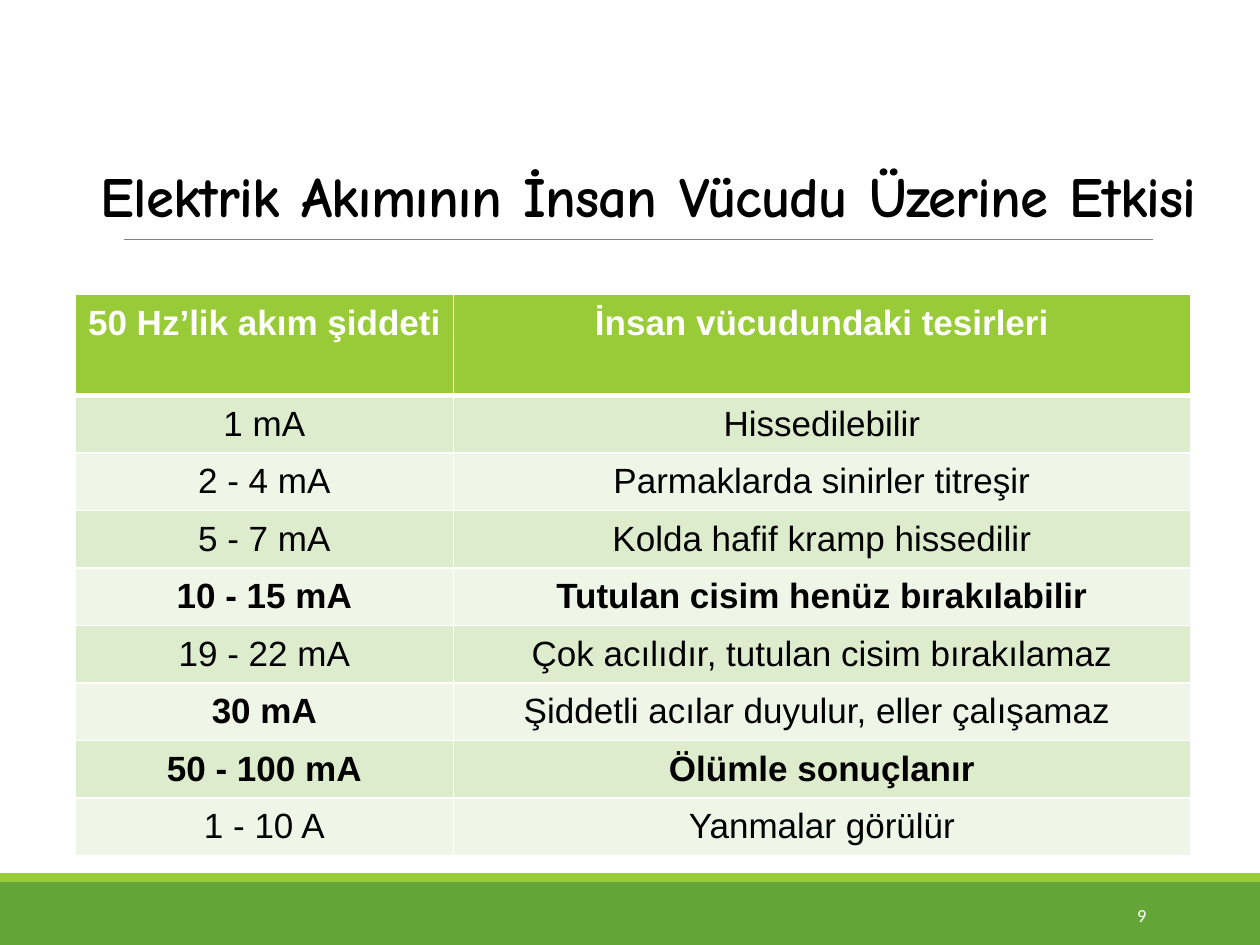
from dataclasses import dataclass

from lxml.etree import SubElement
from pptx import Presentation
from pptx.dml.color import RGBColor
from pptx.enum.shapes import MSO_CONNECTOR as Connector, MSO_SHAPE as Shape
from pptx.enum.text import MSO_ANCHOR as Anchor, MSO_AUTO_SIZE as AutoSize, PP_ALIGN as Align
from pptx.oxml.ns import qn
from pptx.util import Cm, Pt

COLORS = {
    "white": "FFFFFF",
    "black": "000000",
    "rule": "808080",
    "green": "63A537",
    "lime": "99CB38",
    "odd_row": "DEECCE",
    "even_row": "EFF6E8",
}


@dataclass
class Bar:
    top: float
    height: float
    color: str


@dataclass
class Effect:
    current: str
    result: str
    bold_current: bool = False
    bold_result: bool = False


BARS = [Bar(17.78, 1.27, "green"), Bar(17.6, 0.18, "lime")]
HEADER = Effect("50 Hz’lik akım şiddeti ", "İnsan vücudundaki tesirleri", True, True)
EFFECTS = [
    Effect("1 mA", "Hissedilebilir"),
    Effect("2 - 4 mA", "Parmaklarda sinirler titreşir"),
    Effect("5 - 7 mA", "Kolda hafif kramp hissedilir"),
    Effect("10 - 15 mA", "Tutulan cisim henüz bırakılabilir", True, True),
    Effect("19 - 22 mA", "Çok acılıdır, tutulan cisim bırakılamaz"),
    Effect("30 mA", "Şiddetli acılar duyulur, eller çalışamaz ", True),
    Effect("50 - 100 mA", "Ölümle sonuçlanır", True, True),
    Effect("1 - 10 A", "Yanmalar görülür"),
]
COLUMN_WIDTHS = (7.62, 14.86)
HEADER_HEIGHT, ROW_HEIGHT = 2.03, 1.16


def rgb(name: str) -> RGBColor:
    return RGBColor.from_string(COLORS[name])


def set_all(target, values: dict) -> None:
    for name, value in values.items():
        setattr(target, name, value)


def write(frame, text: str, color: str, font: dict, paragraph: dict):
    para = frame.paragraphs[0]
    set_all(para, paragraph)
    span = para.add_run()
    span.text = text
    set_all(span.font, font)
    span.font.color.rgb = rgb(color)
    return span


def draw_bar(page, bar: Bar, width: int) -> None:
    box = page.shapes.add_shape(Shape.RECTANGLE, 0, Cm(bar.top), width, Cm(bar.height))
    box.shadow.inherit = False
    box.fill.solid()
    box.fill.fore_color.rgb = rgb(bar.color)
    box.line.fill.background()


def draw_rule(page) -> None:
    rule = page.shapes.add_connector(Connector.STRAIGHT, Cm(2.49), Cm(4.83), Cm(23.24), Cm(4.83))
    rule.line.color.rgb = rgb("rule")
    rule.line.width = Pt(0.5)
    SubElement(rule._element.spPr, qn("a:effectLst"))


def draw_title(page) -> None:
    title = page.shapes.title
    set_all(title, {"left": Cm(1.78), "top": Cm(1.88), "width": Cm(22.33), "height": Cm(2.87)})
    set_all(title.text_frame, {
        "word_wrap": True, "auto_size": AutoSize.NONE,
        "vertical_anchor": Anchor.BOTTOM, "margin_right": 0,
    })
    span = write(
        title.text_frame, "Elektrik Akımının İnsan Vücudu Üzerine Etkisi ", "black",
        {"name": "Comic Neue", "size": Pt(32.4), "bold": True},
        {"alignment": Align.JUSTIFY, "line_spacing": 1.5},
    )
    span.font._element.set("spc", "-50")


def add_border(cell, side: str, points: float) -> None:
    properties = cell._tc.get_or_add_tcPr()
    line = SubElement(properties, qn(f"a:ln{side}"), w=str(Pt(points)))
    fill = SubElement(line, qn("a:solidFill"))
    SubElement(fill, qn("a:srgbClr"), val=COLORS["white"])


def fill_cell(cell, text: str, bold: bool, row: int) -> None:
    thick_side = {0: "B", 1: "T"}.get(row)
    for side in "LRTB":
        add_border(cell, side, 3 if side == thick_side else 1)
    cell.fill.solid()
    cell.fill.fore_color.rgb = rgb("lime" if row == 0 else "odd_row" if row % 2 else "even_row")
    write(
        cell.text_frame, text, "black" if row else "white",
        {"name": "Arial", "size": Pt(20), "bold": bold},
        {"alignment": Align.CENTER, "line_spacing": 1.07},
    )


def draw_table(page) -> None:
    rows = [HEADER, *EFFECTS]
    height = HEADER_HEIGHT + ROW_HEIGHT * len(EFFECTS)
    table = page.shapes.add_table(
        len(rows), len(COLUMN_WIDTHS), Cm(1.52), Cm(5.94), Cm(sum(COLUMN_WIDTHS)), Cm(height)
    ).table
    for column, width in zip(table.columns, COLUMN_WIDTHS):
        column.width = Cm(width)
    for index, effect in enumerate(rows):
        table.rows[index].height = Cm(ROW_HEIGHT if index else HEADER_HEIGHT)
        fill_cell(table.cell(index, 0), effect.current, effect.bold_current, index)
        fill_cell(table.cell(index, 1), effect.result, effect.bold_result, index)


def draw_page_number(page) -> None:
    box = page.shapes.add_textbox(Cm(20.62), Cm(17.93), Cm(2.74), Cm(1.02))
    set_all(box.text_frame, {"word_wrap": True, "vertical_anchor": Anchor.MIDDLE})
    write(
        box.text_frame, "9", "white",
        {"name": "Calibri", "size": Pt(10.5)}, {"alignment": Align.RIGHT},
    )


def main() -> None:
    deck = Presentation()
    set_all(deck, {"slide_width": Cm(25.4), "slide_height": Cm(19.05)})
    page = deck.slides.add_slide(deck.slide_layouts[5])
    for bar in BARS:
        draw_bar(page, bar, deck.slide_width)
    draw_rule(page)
    draw_title(page)
    draw_table(page)
    draw_page_number(page)
    deck.save("out.pptx")


if __name__ == "__main__":
    main()
